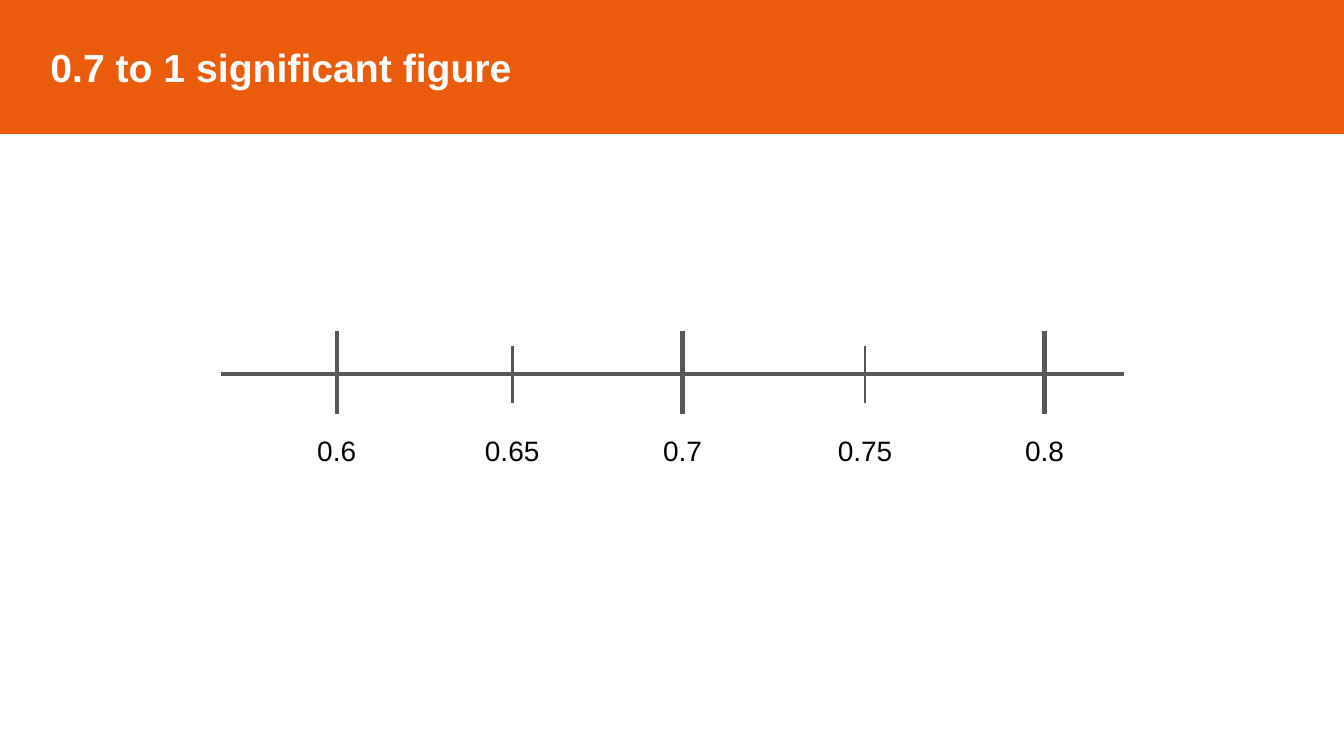
"""Build a slide with a number line for rounding 0.7 to 1 significant figure."""
from pptx import Presentation
from pptx.dml.color import RGBColor
from pptx.enum.shapes import MSO_CONNECTOR, MSO_SHAPE
from pptx.enum.text import MSO_ANCHOR, PP_ALIGN
from pptx.oxml.ns import qn
from pptx.util import Inches, Pt
from lxml import etree

TITLE = "0.7 to 1 significant figure"
TICKS = [("0.6", 3.34), ("0.65", 5.08), ("0.7", 6.77), ("0.75", 8.58), ("0.8", 10.36)]
MAJOR = {"top": 3.28, "bottom": 4.11, "width": 3}
MINOR = {"top": 3.43, "bottom": 4, "width": 2}
AXIS_LEFT, AXIS_RIGHT, AXIS_Y = 2.19, 11.15, 3.71
LABEL_TOP, LABEL_WIDTH, LABEL_HEIGHT = 4.25, 0.75, 0.44
ORANGE, GREY, BLACK, WHITE = "EA5B0C", "575756", "000000", "FFFFFF"


def color(value):
    return RGBColor.from_string(value)


def write(s, text, size=20, fill=BLACK, bold=False, align=PP_ALIGN.CENTER,
          anchor=MSO_ANCHOR.TOP, wrap=False, left=0.1):
    tf = s.text_frame
    tf.word_wrap = wrap
    tf.vertical_anchor = anchor
    tf.margin_left = Inches(left)
    p = tf.paragraphs[0]
    p.alignment = align
    r = p.add_run()
    r.text = text
    r.font.name = "Arial"
    r.font.size = Pt(size)
    r.font.bold = bold
    r.font.color.rgb = color(fill)


def add_line(sp, x1, y1, x2, y2, width):
    s = sp.add_connector(MSO_CONNECTOR.STRAIGHT, Inches(x1), Inches(y1), Inches(x2), Inches(y2))
    s.line.color.rgb = color(GREY)
    s.line.width = Pt(width)
    etree.SubElement(s._element.spPr, qn("a:effectLst"))


def add_banner(sp, width):
    s = sp.add_shape(MSO_SHAPE.RECTANGLE, 0, 0, width, Inches(1.32))
    s.shadow.inherit = False
    s.fill.solid()
    s.fill.fore_color.rgb = color(ORANGE)
    s.line.color.rgb = color(ORANGE)
    s.line.width = Pt(1)
    write(s, TITLE, size=28, fill=WHITE, bold=True, align=PP_ALIGN.LEFT,
          anchor=MSO_ANCHOR.MIDDLE, wrap=True, left=0.5)


def add_number_line(sp):
    add_line(sp, AXIS_LEFT, AXIS_Y, AXIS_RIGHT, AXIS_Y, MAJOR["width"])
    for i, (label, x) in enumerate(TICKS):
        tick = MINOR if i % 2 else MAJOR
        add_line(sp, x, tick["top"], x, tick["bottom"], tick["width"])
        s = sp.add_textbox(Inches(x - LABEL_WIDTH / 2), Inches(LABEL_TOP),
                           Inches(LABEL_WIDTH), Inches(LABEL_HEIGHT))
        write(s, label, wrap=True)


def main():
    prs = Presentation()
    prs.slide_width, prs.slide_height = Inches(13.33), Inches(7.5)
    sp = prs.slides.add_slide(prs.slide_layouts[6]).shapes
    add_number_line(sp)
    add_banner(sp, prs.slide_width)
    prs.save("out.pptx")


if __name__ == "__main__":
    main()
